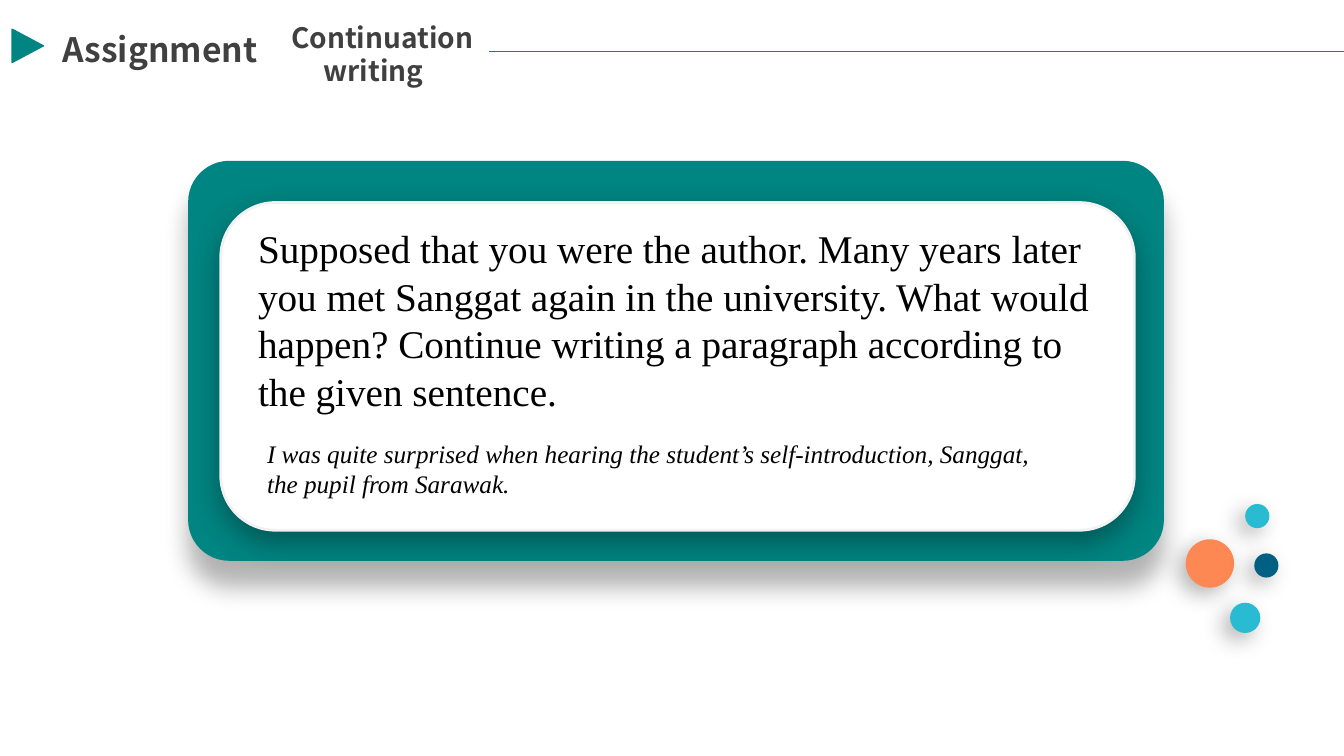
from dataclasses import dataclass
from typing import Optional

from lxml import etree
from pptx import Presentation
from pptx.dml.color import RGBColor
from pptx.enum.shapes import MSO_CONNECTOR, MSO_SHAPE
from pptx.enum.text import MSO_ANCHOR, MSO_AUTO_SIZE, PP_ALIGN
from pptx.oxml.ns import qn
from pptx.util import Pt

PX = 9144
TEAL = RGBColor(0x00, 0x85, 0x82)
WHITE = RGBColor(0xFF, 0xFF, 0xFF)
PALE = RGBColor(0xF2, 0xF2, 0xF2)
ORANGE = RGBColor(0xFD, 0x88, 0x53)
CYAN = RGBColor(0x29, 0xBB, 0xD2)
NAVY = RGBColor(0x00, 0x60, 0x83)
GRAY = RGBColor(0x40, 0x40, 0x40)
BLACK = RGBColor(0x00, 0x00, 0x00)
SANS = "Noto Sans CJK SC"
SERIF = "Times New Roman"
TRIANGLE = MSO_SHAPE.ISOSCELES_TRIANGLE
ROUND = MSO_SHAPE.ROUNDED_RECTANGLE
DOT = MSO_SHAPE.FLOWCHART_CONNECTOR
STRAIGHT = MSO_CONNECTOR.STRAIGHT
LEFT = PP_ALIGN.LEFT
FRAME = {"word_wrap": True, "auto_size": MSO_AUTO_SIZE.NONE,
         "vertical_anchor": MSO_ANCHOR.TOP,
         "margin_left": 10 * PX, "margin_right": 10 * PX,
         "margin_top": 5 * PX, "margin_bottom": 5 * PX}


@dataclass(frozen=True)
class Box:
    x: int
    y: int
    w: int
    h: int


@dataclass(frozen=True)
class Shadow:
    alpha: int
    blur: int
    dist: int
    angle: int


@dataclass(frozen=True)
class Figure:
    kind: MSO_SHAPE
    box: Box
    fill: RGBColor
    line: Optional[RGBColor] = None
    weight: int = 1
    shadow: Optional[Shadow] = None
    adj: Optional[float] = None
    rotation: int = 0


@dataclass(frozen=True)
class Line:
    text: str
    indent: int = 0


@dataclass(frozen=True)
class Style:
    font: dict
    color: RGBColor
    spacing: int


DOT_SHADOW = Shadow(30, 16, 7, 135)
FIGURES = [
    Figure(TRIANGLE, Box(11, 30, 33, 31), TEAL, TEAL, rotation=90),
    Figure(ROUND, Box(188, 161, 965, 394), TEAL, TEAL, 2, Shadow(30, 18, 18, 90), 0.1),
    Figure(ROUND, Box(219, 201, 906, 325), WHITE, PALE, 2, Shadow(34, 22, 8, 90)),
] + [
    Figure(DOT, Box(x, y, size, size), color, shadow=DOT_SHADOW)
    for x, y, size, color in [(1176, 535, 48, ORANGE), (1220, 598, 30, CYAN),
                              (1244, 549, 24, NAVY), (1235, 500, 24, CYAN)]
]
HEADING = Style({"name": SANS, "size": Pt(24), "bold": True}, GRAY, 29)
SUBHEADING = Style({"name": SANS, "size": Pt(20), "bold": True}, GRAY, 24)
TASK = Style({"name": SERIF, "size": Pt(28)}, BLACK, 34)
OPENING = Style({"name": SERIF, "size": Pt(18), "italic": True}, BLACK, 22)


def place(s, box: Box) -> None:
    for name, value in zip(("left", "top", "width", "height"),
                           (box.x, box.y, box.w, box.h)):
        setattr(s, name, value * PX)


def add_shadow(s, shadow: Shadow) -> None:
    effects = s._element.spPr.find(qn("a:effectLst"))
    outer = etree.SubElement(effects, qn("a:outerShdw"),
                             blurRad=str(Pt(shadow.blur)), dist=str(Pt(shadow.dist)),
                             dir=str(shadow.angle * 60000), algn="ctr", rotWithShape="0")
    color = etree.SubElement(outer, qn("a:srgbClr"), val=str(BLACK))
    etree.SubElement(color, qn("a:alpha"), val=str(shadow.alpha * 1000))


def add_figure(slide, fig: Figure) -> None:
    s = slide.shapes.add_shape(fig.kind, 0, 0, 0, 0)
    place(s, fig.box)
    s.rotation = fig.rotation
    s.shadow.inherit = False
    s.fill.solid()
    s.fill.fore_color.rgb = fig.fill
    if fig.line is None:
        s.line.fill.background()
    else:
        s.line.color.rgb = fig.line
        s.line.width = Pt(fig.weight)
    if fig.adj is not None:
        s.adjustments[0] = fig.adj
    if fig.shadow:
        add_shadow(s, fig.shadow)


def add_rule(slide, x1: int, x2: int, y: int) -> None:
    s = slide.shapes.add_connector(STRAIGHT, x1 * PX, y * PX, x2 * PX, y * PX)
    s.line.color.rgb = TEAL
    s.line.width = Pt(1)
    etree.SubElement(s._element.spPr, qn("a:effectLst"))


def write(s, box: Box, lines: list[Line], style: Style) -> None:
    place(s, box)
    tf = s.text_frame
    for name, value in FRAME.items():
        setattr(tf, name, value)
    for i, line in enumerate(lines):
        p = tf.add_paragraph() if i else tf.paragraphs[0]
        paragraph = {"alignment": LEFT, "line_spacing": Pt(style.spacing),
                     "space_before": Pt(0), "space_after": Pt(0)}
        for name, value in paragraph.items():
            setattr(p, name, value)
        pPr = p._p.get_or_add_pPr()
        pPr.set("marL", str(line.indent * PX))
        pPr.set("indent", "0")
        etree.SubElement(pPr, qn("a:buNone"))
        r = p.add_run()
        r.text = line.text
        for name, value in style.font.items():
            setattr(r.font, name, value)
        r.font.color.rgb = style.color


def main() -> None:
    prs = Presentation()
    prs.slide_width, prs.slide_height = 1333 * PX, 750 * PX
    slide = prs.slides.add_slide(prs.slide_layouts[1])
    title, body = slide.placeholders
    for fig in FIGURES:
        add_figure(slide, fig)
    add_rule(slide, 485, 1333, 51)
    write(title, Box(52, 23, 227, 50), [Line("Assignment")], HEADING)
    write(body, Box(246, 217, 868, 199), [Line(
        "Supposed that you were the author. Many years later you met Sanggat again "
        "in the university. What would happen? Continue writing a paragraph "
        "according to the given sentence.")], TASK)
    slide.shapes._spTree.append(body._element)
    write(slide.shapes.add_textbox(0, 0, 0, 0), Box(279, 15, 213, 77),
          [Line("Continuation"), Line("writing", 32)], SUBHEADING)
    write(slide.shapes.add_textbox(0, 0, 0, 0), Box(255, 429, 785, 71), [Line(
        "I was quite surprised when hearing the student’s self-introduction, "
        "Sanggat, the pupil from Sarawak.")], OPENING)
    prs.save("out.pptx")


if __name__ == "__main__":
    main()
